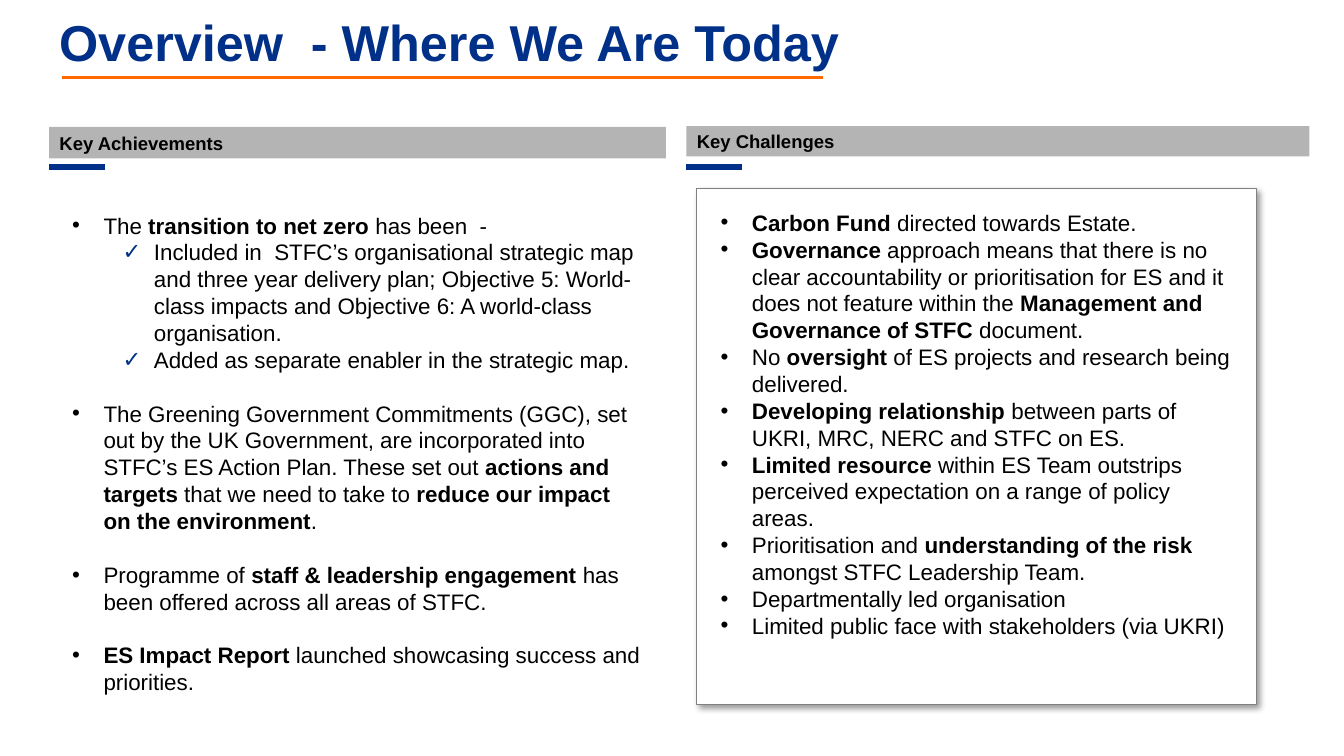
from dataclasses import dataclass

from lxml.etree import SubElement
from pptx import Presentation
from pptx.dml.color import RGBColor
from pptx.enum.shapes import MSO_CONNECTOR, MSO_SHAPE
from pptx.enum.text import MSO_ANCHOR, PP_ALIGN
from pptx.oxml.ns import qn
from pptx.util import Cm, Pt

NAVY = RGBColor(0x00, 0x30, 0x88)
ORANGE = RGBColor(0xFF, 0x69, 0x00)
BAND = RGBColor(0xB4, 0xB4, 0xB4)
BORDER = RGBColor(0x80, 0x80, 0x80)
BLACK = RGBColor(0x00, 0x00, 0x00)
WHITE = RGBColor(0xFF, 0xFF, 0xFF)
FONT = "Arial"
HANG = Cm(0.79)
GAP = Pt(19.2)


@dataclass
class Box:
    left: float
    top: float
    width: float
    height: float

    def lengths(self) -> list:
        return [Cm(v) for v in (self.left, self.top, self.width, self.height)]


@dataclass
class Bullet:
    runs: list  # strings; a (string,) tuple is bold
    level: int = 0
    gap: bool = False


@dataclass
class Column:
    heading: str
    band: Box
    rule_width: float
    body: Box
    bullets: list


ACHIEVEMENTS = Column(
    "Key Achievements", Box(1.24, 3.2, 15.54, 0.79), 4.5, Box(1.57, 5.21, 14.85, 12.57), [
        Bullet(["The ", ("transition to net zero ",), "has been  -"]),
        Bullet(["Included in  STFC’s organisational strategic map and three year delivery plan; "
                "Objective 5: World-class impacts and Objective 6: A world-class organisation."], 1),
        Bullet(["Added as separate enabler in the strategic map."], 1),
        Bullet(["The Greening Government Commitments (GGC), set out by the UK Government, are "
                "incorporated into STFC’s ES Action Plan. These set out ",
                ("actions and targets ",), "that we need to take to ",
                ("reduce our impact on the environment",), "."], gap=True),
        Bullet(["Programme of ", ("staff & leadership engagement ",),
                "has been offered across all areas of STFC."], gap=True),
        Bullet([("ES Impact Report ",), "launched showcasing success and priorities."], gap=True),
    ])

CHALLENGES = Column(
    "Key Challenges", Box(17.3, 3.18, 15.7, 0.76), 3.75, Box(17.91, 5.14, 13.41, 11.2), [
        Bullet([("Carbon Fund ",), "directed towards Estate."]),
        Bullet([("Governance",), " approach means that there is no clear accountability or "
                "prioritisation for ES and it does not feature within the ",
                ("Management and Governance of STFC ",), "document."]),
        Bullet(["No", (" oversight ",), "of ES projects and research being delivered."]),
        Bullet([("Developing relationship ",), "between parts of UKRI, MRC, NERC and STFC on ES."]),
        Bullet([("Limited resource ",),
                "within ES Team outstrips perceived expectation on a range of policy areas."]),
        Bullet(["Prioritisation and ", ("understanding of the risk ",),
                "amongst STFC Leadership Team."]),
        Bullet(["Departmentally led organisation"]),
        Bullet(["Limited public face with stakeholders (via UKRI)"]),
    ])


def add_run(p, text: str, size: float, color: RGBColor, bold: bool) -> None:
    r = p.add_run()
    r.text = text
    r.font.name, r.font.size, r.font.bold = FONT, Pt(size), bold
    r.font.color.rgb = color


def add_rect(s, box: Box, fill: RGBColor):
    sp = s.shapes.add_shape(MSO_SHAPE.RECTANGLE, *box.lengths())
    sp.fill.solid()
    sp.fill.fore_color.rgb = fill
    sp.line.fill.background()
    sp.shadow.inherit = False
    return sp


def add_line(s, left: float, right: float, y: float, color: RGBColor, width: float) -> None:
    line = s.shapes.add_connector(MSO_CONNECTOR.STRAIGHT, Cm(left), Cm(y), Cm(right), Cm(y))
    line.line.color.rgb = color
    line.line.width = Pt(width)
    SubElement(line._element.spPr, qn("a:effectLst"))


def add_textbox(s, box: Box):
    tf = s.shapes.add_textbox(*box.lengths()).text_frame
    tf.word_wrap = True
    return tf


def set_bullet(p, level: int) -> None:
    pPr = p._p.get_or_add_pPr()
    pPr.set("marL", str(HANG + level * Cm(1.27)))
    pPr.set("indent", str(-HANG))
    if level:
        color = SubElement(pPr, qn("a:buClr"))
        SubElement(color, qn("a:srgbClr"), val=str(NAVY))
    SubElement(pPr, qn("a:buFont"), typeface=FONT)
    SubElement(pPr, qn("a:buChar"), char="✓" if level else "•")


def add_column(s, column: Column) -> None:
    # Heading band with its short rule
    band = column.band
    tf = add_rect(s, band, BAND).text_frame
    tf.margin_left, tf.margin_right, tf.margin_top, tf.margin_bottom = Cm(0.26), 0, 0, 0
    tf.vertical_anchor = MSO_ANCHOR.MIDDLE
    p = tf.paragraphs[0]
    p.alignment = PP_ALIGN.LEFT
    p.space_after = Pt(3)
    add_run(p, column.heading, 13.2, BLACK, True)
    add_line(s, band.left, band.left + 1.4, 4.21, NAVY, column.rule_width)

    # Bulleted text
    tf = add_textbox(s, column.body)
    for i, bullet in enumerate(column.bullets):
        p = tf.add_paragraph() if i else tf.paragraphs[0]
        p.level = bullet.level
        set_bullet(p, bullet.level)
        if bullet.gap:
            p.space_before = GAP
        for part in bullet.runs:
            bold = isinstance(part, tuple)
            add_run(p, part[0] if bold else part, 16, BLACK, bold)


def add_panel(s, box: Box) -> None:
    sp = add_rect(s, box, WHITE)
    sp.line.color.rgb = BORDER
    sp.line.width = Pt(1)
    effects = sp._element.spPr.find(qn("a:effectLst"))
    shadow = SubElement(effects, qn("a:outerShdw"), blurRad=str(Pt(4)), dist=str(Pt(3)),
                        dir="2700000", algn="tl", rotWithShape="0")
    color = SubElement(shadow, qn("a:srgbClr"), val=str(BLACK))
    SubElement(color, qn("a:alpha"), val="40000")


def add_title(s) -> None:
    tf = add_textbox(s, Box(1.24, 0.3, 31.06, 1.65))
    tf.vertical_anchor = MSO_ANCHOR.BOTTOM
    p = tf.paragraphs[0]
    p.line_spacing = 0.9
    add_run(p, "Overview  - Where We Are Today", 36, NAVY, True)
    add_line(s, 1.55, 20.73, 1.96, ORANGE, 2.25)


def main() -> None:
    prs = Presentation()
    prs.slide_width, prs.slide_height = Cm(33.87), Cm(19.05)
    s = prs.slides.add_slide(prs.slide_layouts[6])
    add_title(s)
    add_panel(s, Box(17.55, 4.75, 14.12, 13))
    for column in (ACHIEVEMENTS, CHALLENGES):
        add_column(s, column)
    prs.save("out.pptx")


if __name__ == "__main__":
    main()
